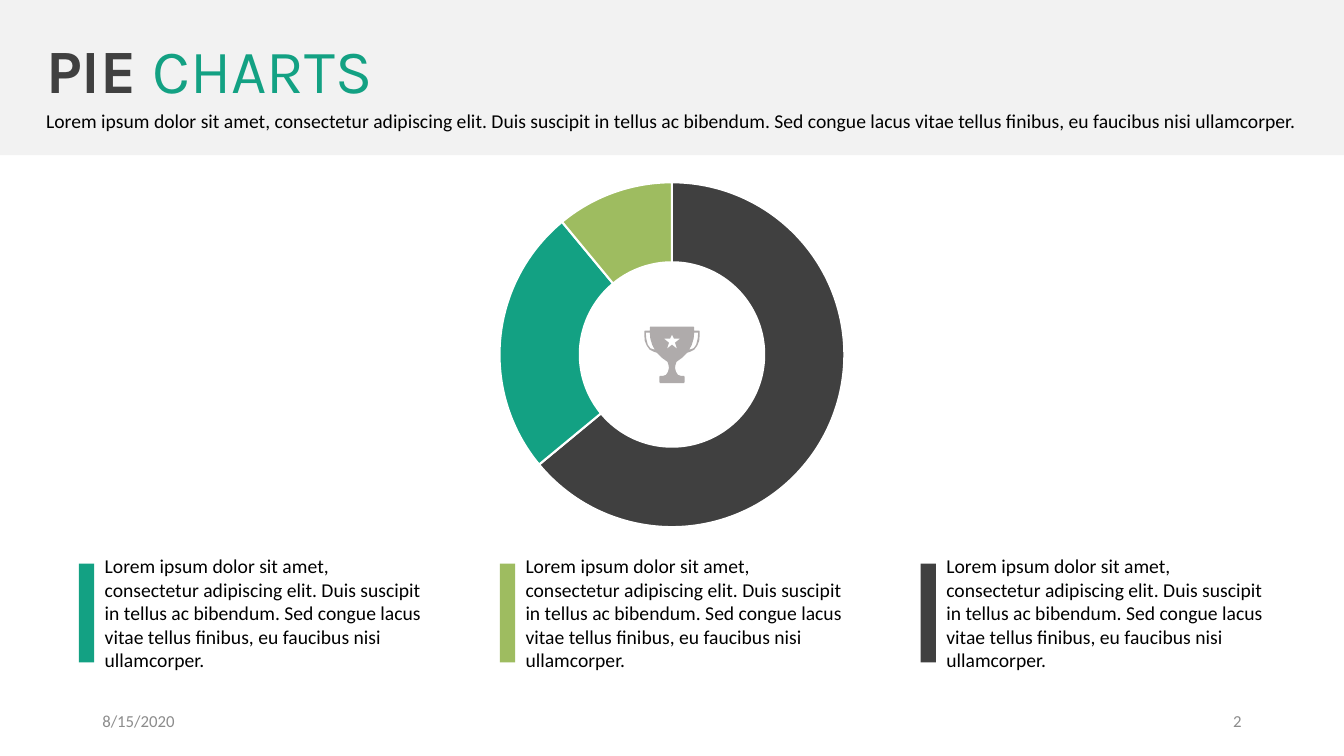
from dataclasses import dataclass

from lxml.etree import SubElement
from pptx import Presentation
from pptx.chart.data import CategoryChartData
from pptx.dml.color import RGBColor
from pptx.enum.chart import XL_CHART_TYPE as ChartType
from pptx.enum.shapes import MSO_SHAPE as Preset
from pptx.enum.text import MSO_ANCHOR as Anchor
from pptx.enum.text import MSO_AUTO_SIZE as AutoSize
from pptx.enum.text import PP_ALIGN as Align
from pptx.oxml.ns import qn
from pptx.util import Pt

DARK, TEAL, GREEN = "404040", "13A183", "9EBC60"
WHITE, BLACK, BAND, FOOTER, ICON = "FFFFFF", "000000", "F2F2F2", "8C8C8C", "AFABAB"
LOREM = (
    "Lorem ipsum dolor sit amet, consectetur adipiscing elit. Duis suscipit in tellus ac "
    "bibendum. Sed congue lacus vitae tellus finibus, eu faucibus nisi ullamcorper."
)
SLIDE_WIDTH, SLIDE_HEIGHT = 960, 540
COLUMN_LEFT, COLUMN_STEP = 56.4, 300.6
INSETS = ("margin_left", "margin_top", "margin_right", "margin_bottom")


@dataclass
class Box:
    left: float
    top: float
    width: float
    height: float

    def lengths(self) -> tuple:
        return tuple(Pt(n) for n in (self.left, self.top, self.width, self.height))


@dataclass
class Run:
    text: str
    color: str = BLACK
    size: float = 14
    name: str = "Calibri"
    bold: bool = False


@dataclass
class Slice:
    label: str
    value: int
    color: str


def rgb(value: str) -> RGBColor:
    return RGBColor.from_string(value)


def paint(shape, color: str) -> None:
    shape.fill.solid()
    shape.fill.fore_color.rgb = rgb(color)
    shape.line.fill.background()
    shape.shadow.inherit = False


def add_block(shapes, preset: Preset, box: Box, color: str) -> None:
    paint(shapes.add_shape(preset, *box.lengths()), color)


def add_text(shapes, box: Box, runs: list[Run], frame_format: dict, align=Align.LEFT) -> None:
    frame = shapes.add_textbox(*box.lengths()).text_frame
    for key, value in {"word_wrap": True, **frame_format}.items():
        setattr(frame, key, value)
    paragraph = frame.paragraphs[0]
    paragraph.alignment = align
    for item in runs:
        run = paragraph.add_run()
        run.text = item.text
        font_format = {"name": item.name, "size": Pt(item.size), "bold": item.bold}
        for key, value in font_format.items():
            setattr(run.font, key, value)
        run.font.color.rgb = rgb(item.color)


def add_pie(shapes, box: Box, slices: list[Slice]) -> None:
    data = CategoryChartData()
    data.categories = [part.label for part in slices]
    data.add_series("Series 1", [part.value for part in slices])
    chart = shapes.add_chart(ChartType.PIE, *box.lengths(), data).chart
    for key, value in {"has_title": False, "has_legend": False}.items():
        setattr(chart, key, value)
    chart.font.name, chart.font.size = "Calibri", Pt(10)
    chart.font.color.rgb = rgb(BLACK)
    plot = chart.plots[0]
    plot.vary_by_categories = True
    for index, part in enumerate(slices):
        style = plot.series[0].points[index].format
        style.fill.solid()
        style.fill.fore_color.rgb = rgb(part.color)
        style.line.color.rgb = rgb(WHITE)
        style.line.width = Pt(1.5)

    # Fixed place for the pie inside its frame
    area = chart.element.find(".//" + qn("c:plotArea"))
    layout = area.find(qn("c:layout"))
    if layout is None:
        layout = SubElement(area, qn("c:layout"))
        area.insert(0, layout)
    manual = SubElement(layout, qn("c:manualLayout"))
    settings = {"layoutTarget": "inner", "xMode": "edge", "yMode": "edge",
                "x": "0.19", "y": "0.04", "w": "0.62", "h": "0.92"}
    for tag, value in settings.items():
        SubElement(manual, qn("c:" + tag)).set("val", value)


def mirrored(points: list[tuple]) -> list[tuple]:
    return [(-x, y) for x, y in points]


def add_trophy(shapes, center: float, top: float) -> None:
    # Right halves, measured from the axis in steps of 0.36 pt
    cup = [(43, 0), (44, 2), (44, 8), (54, 8), (55, 10), (55, 16), (54, 28), (50, 38),
           (44, 46), (36, 50), (30, 52), (20, 62), (9, 70), (7, 76), (6, 82), (8, 90),
           (12, 96), (18, 98), (24, 98), (25, 100), (25, 110), (24, 112)]
    handle = [(44, 12), (52, 12), (51, 24), (48, 36), (43, 43), (34, 46), (39, 37), (43, 24)]
    star = [(0, 16), (4, 24), (16, 24), (6, 32), (10, 44), (0, 36)]
    contours = [cup + mirrored(cup)[::-1], handle, mirrored(handle),
                star + mirrored(star)[-2:0:-1]]
    builder = shapes.build_freeform(*contours[0][0], scale=float(Pt(0.36)))
    builder.add_line_segments(contours[0][1:], close=True)
    for contour in contours[1:]:
        builder.move_to(*contour[0])
        builder.add_line_segments(contour[1:], close=True)
    paint(builder.convert_to_shape(Pt(center), Pt(top)), ICON)


def main() -> None:
    presentation = Presentation()
    presentation.slide_width, presentation.slide_height = Pt(SLIDE_WIDTH), Pt(SLIDE_HEIGHT)
    slide = presentation.slides.add_slide(presentation.slide_layouts[6])
    shapes = slide.shapes
    tight = {**dict.fromkeys(INSETS, 0), "auto_size": AutoSize.SHAPE_TO_FIT_TEXT}
    middle = {"vertical_anchor": Anchor.MIDDLE}

    # Header
    add_block(shapes, Preset.RECTANGLE, Box(0, 0, SLIDE_WIDTH, 110.8), BAND)
    title = [Run("PIE ", DARK, 44, "Karla", True), Run("CHARTS", TEAL, 44, "Karla")]
    add_text(shapes, Box(33, 23, 894, 53.3), title, tight)
    add_text(shapes, Box(33, 77.8, 894, 17), [Run(LOREM)], tight)

    # Footer
    for left, text, align in ((66, "8/15/2020", Align.LEFT), (678, "2", Align.RIGHT)):
        add_text(shapes, Box(left, 500.5, 216, 28.75), [Run(text, FOOTER, 12)], middle, align)

    # Ring: pie with a white centre and a trophy
    slices = [Slice("1", 64, DARK), Slice("2", 25, TEAL), Slice("3", 11, GREEN)]
    add_pie(shapes, Box(278.8, 119.5, 402.4, 267.8), slices)
    add_block(shapes, Preset.OVAL, Box(413.4, 186.6, 133.2, 133.2), WHITE)
    add_trophy(shapes, SLIDE_WIDTH / 2, 233.3)

    # Columns with colour bars
    for index, color in enumerate((TEAL, GREEN, DARK)):
        left = COLUMN_LEFT + index * COLUMN_STEP
        column = shapes.add_group_shape().shapes
        add_block(column, Preset.RECTANGLE, Box(left, 402.6, 10.9, 70.5), color)
        add_text(column, Box(left + 18.4, 404, 227.5, 67.8), [Run(LOREM)], {**tight, **middle})

    presentation.save("out.pptx")


if __name__ == "__main__":
    main()
